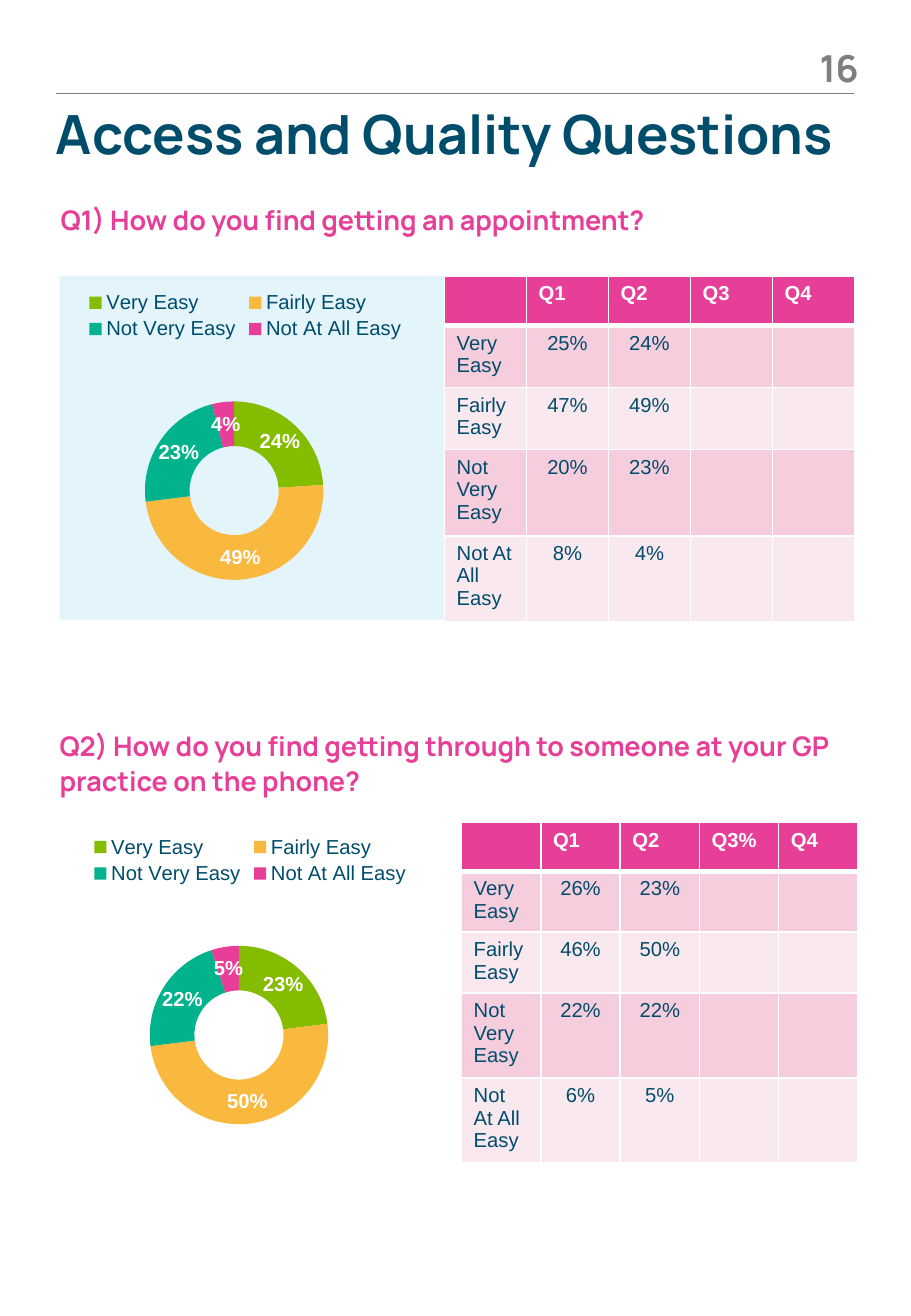
"""Survey page: two access questions, each with a doughnut chart and a quarterly table."""
from lxml import etree
from pptx import Presentation, util as u
from pptx.chart.data import CategoryChartData
from pptx.dml.color import RGBColor
from pptx.enum import chart as ch, shapes, text
from pptx.oxml import parse_xml
from pptx.oxml.ns import nsdecls, qn

THEME = {
    "navy": "004C6B", "pink": "E73E97", "grey": "7F7F7F", "white": "FFFFFF", "panel": "E3F4FB",
    "bands": ["F6CDDD", "FAE8EF"], "answers": ["84BD00", "F9B93E", "00B38C", "E73E97"],
    "heading": "Manrope", "body": "Arial",
    "title": 32, "number": 22, "question": 16, "label": 12,
}

deck = Presentation()
deck.slide_width, deck.slide_height = u.Inches(7.5), u.Inches(10.83)
page = deck.slides.add_slide(deck.slide_layouts[6])
unit = deck.slide_width / 75


def grid(*cells):
    """Turn counts of grid units (75 across the page) into lengths."""
    return [u.Emu(round(cell * unit)) for cell in cells]


def style(font, size, color, face, bold=False):
    """Apply one type style."""
    font.size, font.bold, font.name = u.Pt(size), bold, face
    font.color.rgb = RGBColor.from_string(color)


rule = page.shapes.add_connector(shapes.MSO_CONNECTOR.STRAIGHT, *grid(4.6, 7.7, 70.3, 7.7))
rule.line.color.rgb = RGBColor.from_string(THEME["grey"])
rule.line.width = u.Pt(0.75)
etree.SubElement(rule._element.spPr, qn("a:effectLst"))

panel = page.shapes.add_shape(shapes.MSO_SHAPE.RECTANGLE, *grid(4.9, 22.7, 31.8, 28.3))
panel.shadow.inherit = False
panel.fill.solid()
panel.fill.fore_color.rgb = RGBColor.from_string(THEME["panel"])
panel.line.fill.background()

left, right = text.PP_ALIGN.LEFT, text.PP_ALIGN.RIGHT
headings = [
    ("Access and Quality Questions", (4.6, 8.3, 69.1, 5), "title", "navy", left, 1),
    ("16", (6.43 * 10, 3.7, 6.4, 3.9), "number", "grey", right, 1),
    ("Q1) How do you find getting an appointment?", (5, 16.6, 60, 2.4),
     "question", "pink", left, 1.06),
    ("Q2) How do you find getting through to someone at your GP practice on the phone?",
     (4.9, 59.9, 64.9, 5.6), "question", "pink", left, 1.06),
]
for wording, place, size, color, alignment, spacing in headings:
    frame = page.shapes.add_textbox(*grid(*place)).text_frame
    frame.word_wrap = True
    frame.margin_left = frame.margin_right = frame.margin_top = frame.margin_bottom = 0
    frame.text = wording
    line = frame.paragraphs[0]
    line.alignment, line.line_spacing = alignment, spacing
    style(line.runs[0].font, THEME[size], THEME[color], THEME["heading"], True)

answers = ["Very Easy", "Fairly Easy", "Not Very Easy", "Not At All Easy"]
questions = [
    {"chart": (4.9, 22.9), "table": (36.6, 22.7), "column": 6.75,
     "rows": [4.1, 5.1, 5.1, 7.1, 7.1], "quarters": ["Q1", "Q2", "Q3", "Q4"],
     "shares": [(25, 24), (47, 49), (20, 23), (8, 4)]},
    {"chart": (5.3, 67.7), "table": (38, 67.7), "column": 6.53,
     "rows": [3.5, 4.4, 4.4, 6.2, 6.2], "quarters": ["Q1", "Q2", "Q3%", "Q4"],
     "shares": [(26, 23), (46, 50), (22, 22), (6, 5)]},
]
for question in questions:
    results = CategoryChartData()
    results.categories = answers
    results.add_series("Series 1", [latest for _, latest in question["shares"]])
    doughnut = page.shapes.add_chart(
        ch.XL_CHART_TYPE.DOUGHNUT, *grid(*question["chart"], 30.6, 28.9), results).chart
    style(doughnut.font, 10, THEME["navy"], THEME["body"])
    doughnut.has_title = False
    doughnut.has_legend = True
    doughnut.legend.position = ch.XL_LEGEND_POSITION.TOP
    doughnut.legend.include_in_layout = False
    style(doughnut.legend.font, THEME["label"], THEME["navy"], THEME["body"])

    ring = doughnut.plots[0]
    ring.vary_by_categories = True
    ring._element.find(qn("c:holeSize")).set("val", "50")
    for index, color in enumerate(THEME["answers"]):
        slice_fill = ring.series[0].points[index].format.fill
        slice_fill.solid()
        slice_fill.fore_color.rgb = RGBColor.from_string(color)
    ring.has_data_labels = True
    labels = ring.data_labels
    labels.show_percentage, labels.show_value = True, False
    labels.number_format, labels.number_format_is_linked = "0%", False
    style(labels.font, THEME["label"], THEME["white"], THEME["body"], True)

    plot_area = doughnut._chartSpace.chart.plotArea
    for old_layout in plot_area.findall(qn("c:layout")):
        plot_area.remove(old_layout)
    plot_area.insert(0, parse_xml(
        f'<c:layout {nsdecls("c")}><c:manualLayout><c:layoutTarget val="inner"/>'
        '<c:xMode val="edge"/><c:yMode val="edge"/><c:x val="0.23"/><c:y val="0.31"/>'
        '<c:w val="0.48"/><c:h val="0.59"/></c:manualLayout></c:layout>'))

    entries = [["", *question["quarters"]]]
    for answer, shares in zip(answers, question["shares"]):
        entries.append([answer, *(f"{share}%" for share in shares), "", ""])
    size = grid(question["column"] * 5, sum(question["rows"]))
    quarterly = page.shapes.add_table(5, 5, *grid(*question["table"]), *size).table
    for column in quarterly.columns:
        column.width = grid(question["column"])[0]
    for r, (height, entry_row) in enumerate(zip(question["rows"], entries)):
        quarterly.rows[r].height = grid(height)[0]
        for c, entry in enumerate(entry_row):
            cell = quarterly.cell(r, c)
            borders = {"L": 1, "R": 1, "T": 3 if r == 1 else 1, "B": 3 if r == 0 else 1}
            for side, points in borders.items():
                cell._tc.get_or_add_tcPr().append(parse_xml(
                    f'<a:ln{side} {nsdecls("a")} w="{u.Pt(points)}"><a:solidFill>'
                    f'<a:srgbClr val="{THEME["white"]}"/></a:solidFill></a:ln{side}>'))
            cell.fill.solid()
            cell.fill.fore_color.rgb = RGBColor.from_string(
                THEME["bands"][(r - 1) % 2] if r else THEME["pink"])
            if entry:
                cell.text_frame.text = entry
                line = cell.text_frame.paragraphs[0]
                line.alignment = text.PP_ALIGN.CENTER if r and c else left
                style(line.runs[0].font, THEME["label"],
                      THEME["navy" if r else "white"], THEME["body"], r == 0)

deck.save("out.pptx")
